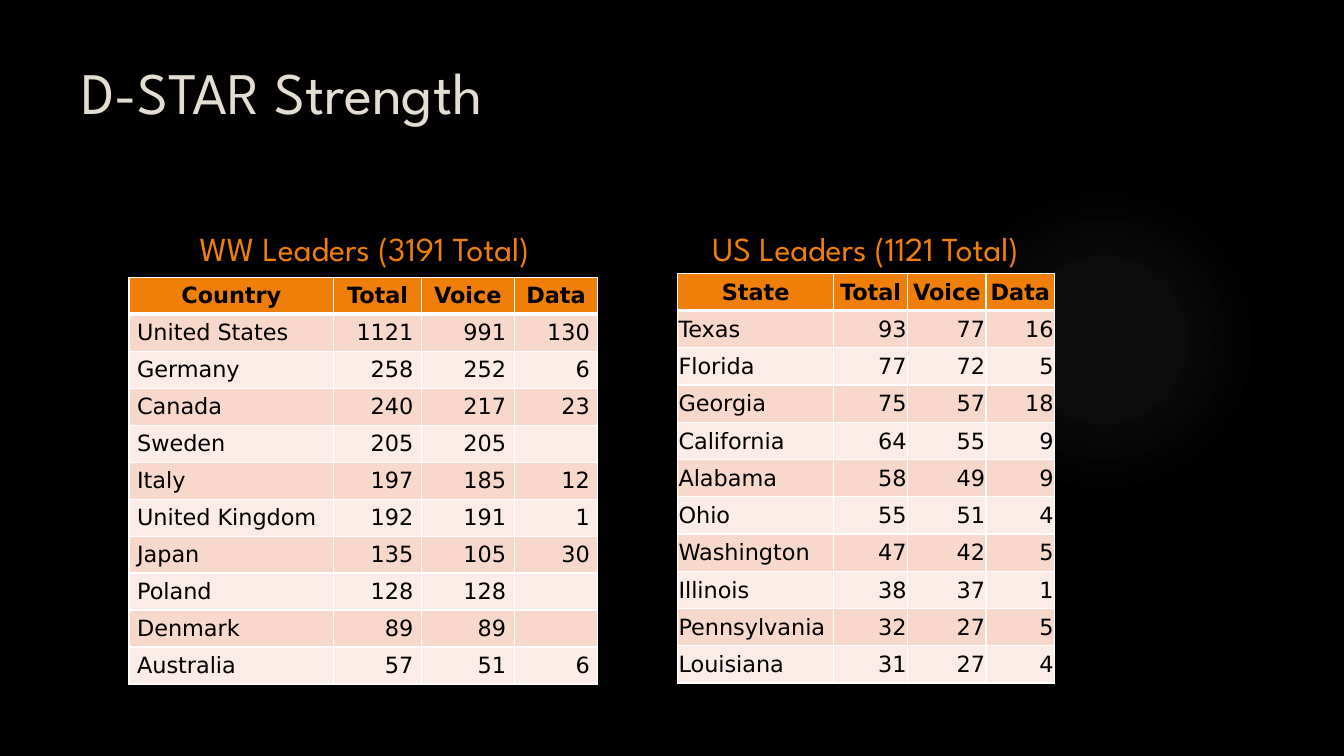
from lxml import etree
from pptx import Presentation
from pptx.dml.color import RGBColor
from pptx.enum.shapes import MSO_SHAPE
from pptx.enum.text import MSO_ANCHOR, PP_ALIGN
from pptx.oxml import parse_xml
from pptx.oxml.ns import nsdecls, qn
from pptx.util import Inches, Pt

OVAL = MSO_SHAPE.OVAL
TOP, MIDDLE, BOTTOM = MSO_ANCHOR.TOP, MSO_ANCHOR.MIDDLE, MSO_ANCHOR.BOTTOM
LEFT, CENTER, RIGHT = PP_ALIGN.LEFT, PP_ALIGN.CENTER, PP_ALIGN.RIGHT

BLACK = RGBColor(0x00, 0x00, 0x00)
WHITE = RGBColor(0xFF, 0xFF, 0xFF)
CREAM = RGBColor(0xE3, 0xDE, 0xD1)
ORANGE = RGBColor(0xF0, 0x7F, 0x09)
ROSE = RGBColor(0xF9, 0xD8, 0xCC)
PALE = RGBColor(0xFC, 0xEC, 0xE7)
GRAY = RGBColor(0xAD, 0xAD, 0xAD)

HEAD = "League Spartan"
BODY = "DejaVu Sans"
SIZE = 16

WORLD = [
    ("Country", "Total", "Voice", "Data"),
    ("United States", "1121", "991", "130"),
    ("Germany", "258", "252", "6"),
    ("Canada", "240", "217", "23"),
    ("Sweden", "205", "205", ""),
    ("Italy", "197", "185", "12"),
    ("United Kingdom", "192", "191", "1"),
    ("Japan", "135", "105", "30"),
    ("Poland", "128", "128", ""),
    ("Denmark", "89", "89", ""),
    ("Australia", "57", "51", "6"),
]
STATES = [
    ("State", "Total", "Voice", "Data"),
    ("Texas", "93", "77", "16"),
    ("Florida", "77", "72", "5"),
    ("Georgia", "75", "57", "18"),
    ("California", "64", "55", "9"),
    ("Alabama", "58", "49", "9"),
    ("Ohio", "55", "51", "4"),
    ("Washington", "47", "42", "5"),
    ("Illinois", "38", "37", "1"),
    ("Pennsylvania", "32", "27", "5"),
    ("Louisiana", "31", "27", "4"),
]


def add_run(para, text, font, size, color, bold=False):
    """Add one styled run to a paragraph."""
    run = para.add_run()
    run.text = text
    run.font.name = font
    run.font.size = Pt(size)
    run.font.color.rgb = color
    run.font.bold = bold


def add_glow(slide, x, y, size):
    """Add a round glow that fades out from its centre."""
    glow = slide.shapes.add_shape(OVAL, Inches(x), Inches(y), Inches(size), Inches(size))
    glow.shadow.inherit = False
    glow.line.fill.background()
    glow.fill.background()
    stops = "".join(
        f'<a:gs pos="{pos * 1000}"><a:srgbClr val="{GRAY}">'
        f'<a:alpha val="{alpha * 1000}"/></a:srgbClr></a:gs>'
        for pos, alpha in ((0, 7), (36, 6), (69, 0))
    )
    props = glow._element.spPr
    props.replace(props.find(qn("a:noFill")), parse_xml(
        f'<a:gradFill {nsdecls("a")}><a:gsLst>{stops}</a:gsLst><a:path path="circle">'
        '<a:fillToRect l="50000" t="50000" r="50000" b="50000"/></a:path></a:gradFill>'
    ))


def add_text(slide, text, box, size, color, align, anchor):
    """Add a one-line heading."""
    frame = slide.shapes.add_textbox(*map(Inches, box)).text_frame
    frame.word_wrap = True
    frame.vertical_anchor = anchor
    para = frame.paragraphs[0]
    para.alignment = align
    add_run(para, text, HEAD, size, color)


def set_edges(cell, base):
    """Draw white cell borders with the given bottom width."""
    props = cell._tc.get_or_add_tcPr()
    for spot, (side, width) in enumerate((("L", 1), ("R", 1), ("T", 1), ("B", base))):
        props.insert(spot, parse_xml(
            f'<a:ln{side} {nsdecls("a")} w="{Pt(width)}"><a:solidFill>'
            f'<a:srgbClr val="{WHITE}"/></a:solidFill></a:ln{side}>'
        ))


def fill_cell(cell, text, row, col, pads):
    """Style one cell and write its text."""
    first = row == 0
    cell.fill.solid()
    cell.fill.fore_color.rgb = ORANGE if first else ROSE if row % 2 else PALE
    cell.vertical_anchor = MIDDLE
    (cell.margin_left, cell.margin_top,
     cell.margin_right, cell.margin_bottom) = map(Inches, pads)
    set_edges(cell, 3 if first else 1)
    para = cell.text_frame.paragraphs[0]
    para.alignment = CENTER if first else RIGHT if col else LEFT
    if text:
        add_run(para, text, BODY, SIZE, BLACK, first)
    else:
        end = etree.SubElement(para._p, qn("a:endParaRPr"), sz=str(SIZE * 100))
        etree.SubElement(end, qn("a:latin"), typeface=BODY)


def add_grid(slide, data, x, y, widths, height, pads):
    """Add a table of leaders."""
    table = slide.shapes.add_table(
        len(data), len(widths), Inches(x), Inches(y),
        Inches(sum(widths)), Inches(height * len(data)),
    ).table
    for column, width in zip(table.columns, widths):
        column.width = Inches(width)
    for row, words in enumerate(data):
        table.rows[row].height = Inches(height)
        for col, text in enumerate(words):
            fill_cell(table.cell(row, col), text, row, col, pads)


def main():
    """Build the slide and save it."""
    deck = Presentation()
    deck.slide_width, deck.slide_height = Inches(13.33), Inches(7.5)
    slide = deck.slides.add_slide(deck.slide_layouts[6])
    back = slide.background.fill
    back.solid()
    back.fore_color.rgb = BLACK
    add_glow(slide, 9.41, 1.83, 3.08)
    add_text(slide, "D-STAR Strength", (0.71, 0.5, 10.29, 1.53), 42, CREAM, LEFT, TOP)
    for x, text in ((1.21, "WW Leaders (3191 Total)"), (6.18, "US Leaders (1121 Total)")):
        add_text(slide, text, (x, 2.08, 4.81, 0.63), 24, ORANGE, CENTER, BOTTOM)
    add_grid(slide, WORLD, 1.28, 2.75, (2.03, 0.87, 0.92, 0.83), 0.28,
             (0.08, 0.05, 0.08, 0.05))
    add_grid(slide, STATES, 6.72, 2.71, (1.55, 0.73, 0.78, 0.68), 0.37,
             (0.01, 0.01, 0.01, 0))
    deck.save("out.pptx")


if __name__ == "__main__":
    main()
